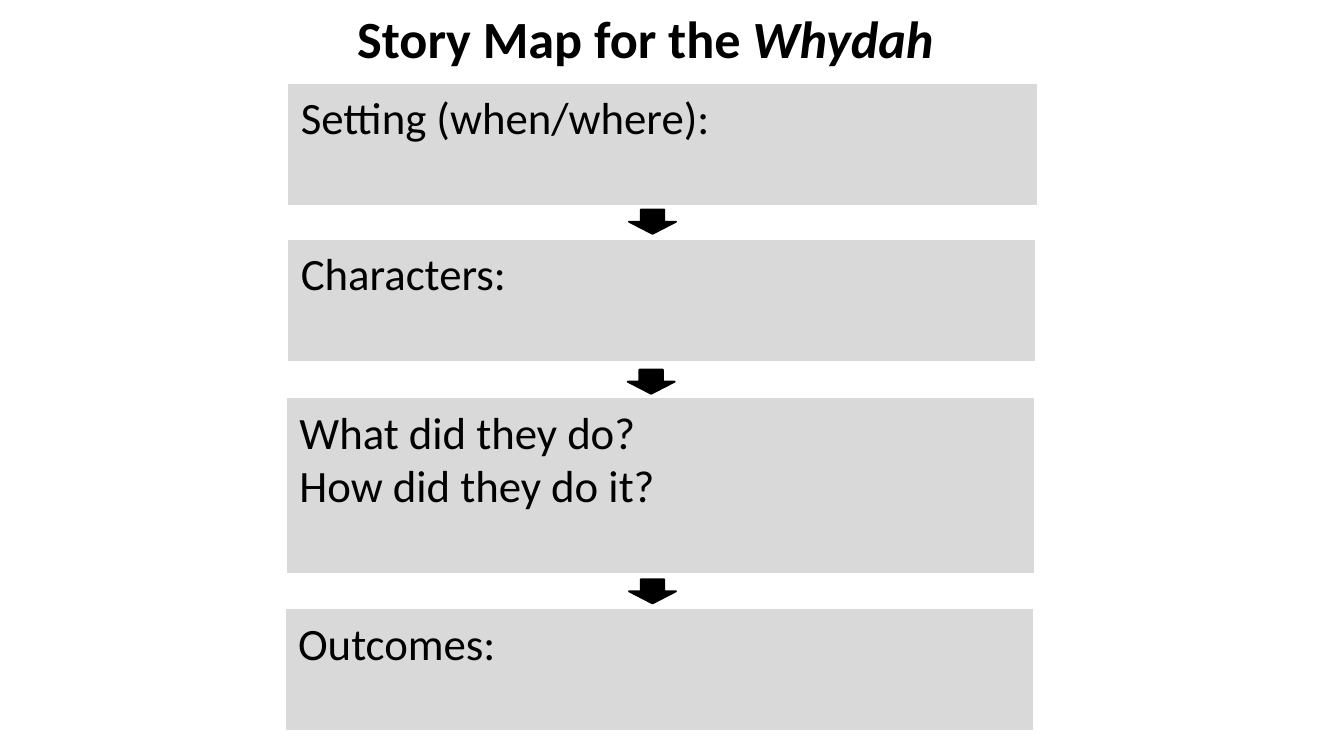
import pptx
import pptx.dml.color
import pptx.enum.shapes
import pptx.enum.text
import pptx.util

Inches = pptx.util.Inches
SHAPES = pptx.enum.shapes.MSO_SHAPE


def paint(shape, fill, line, weight):
    shape.shadow.inherit = False
    shape.fill.solid()
    shape.fill.fore_color.rgb = pptx.dml.color.RGBColor.from_string(fill)
    shape.line.color.rgb = pptx.dml.color.RGBColor.from_string(line)
    shape.line.width = pptx.util.Pt(weight)


def add_span(para, text, size, bold=None, italic=None):
    span = para.add_run()
    span.text = text
    span.font.name = "Calibri"
    span.font.size = pptx.util.Pt(size)
    span.font.bold = bold
    span.font.italic = italic
    span.font.color.rgb = pptx.dml.color.RGBColor.from_string("000000")


deck = pptx.Presentation()
deck.slide_width = Inches(10)
deck.slide_height = deck.slide_width * 9 // 16
page = deck.slides.add_slide(deck.slide_layouts[6])

# Title
title = page.shapes.add_textbox(Inches(2.56), 0, Inches(4.57), Inches(0.57))
title.text_frame.word_wrap = True
heading = title.text_frame.paragraphs[0]
add_span(heading, "Story Map for the ", 28, bold=True)
add_span(heading, "Whydah", 28, bold=True, italic=True)

# Story steps: left, top, width, height, lines
steps = [
    (2.14, 0.62, 5.58, 0.91, ["Setting (when/where):"]),
    (2.14, 1.78, 5.57, 0.91, ["Characters:"]),
    (2.13, 2.96, 5.57, 1.31, ["What did they do?", "How did they do it?"]),
    (2.12, 4.53, 5.57, 0.91, ["Outcomes:"]),
]
for left, top, width, height, lines in steps:
    box = page.shapes.add_shape(
        SHAPES.RECTANGLE, Inches(left), Inches(top), Inches(width), Inches(height))
    paint(box, "D9D9D9", "FFFFFF", 0.75)
    frame = box.text_frame
    frame.word_wrap = True
    frame.vertical_anchor = pptx.enum.text.MSO_ANCHOR.TOP
    for index, line in enumerate(lines):
        para = frame.add_paragraph() if index else frame.paragraphs[0]
        para.alignment = pptx.enum.text.PP_ALIGN.LEFT
        add_span(para, line, 24)

# Arrows between the steps
for left, top in ((4.68, 1.56), (4.67, 2.75), (4.68, 4.31)):
    arrow = page.shapes.add_shape(
        SHAPES.DOWN_ARROW, Inches(left), Inches(top), Inches(0.35), Inches(0.18))
    paint(arrow, "000000", "000000", 1)

deck.save("out.pptx")
